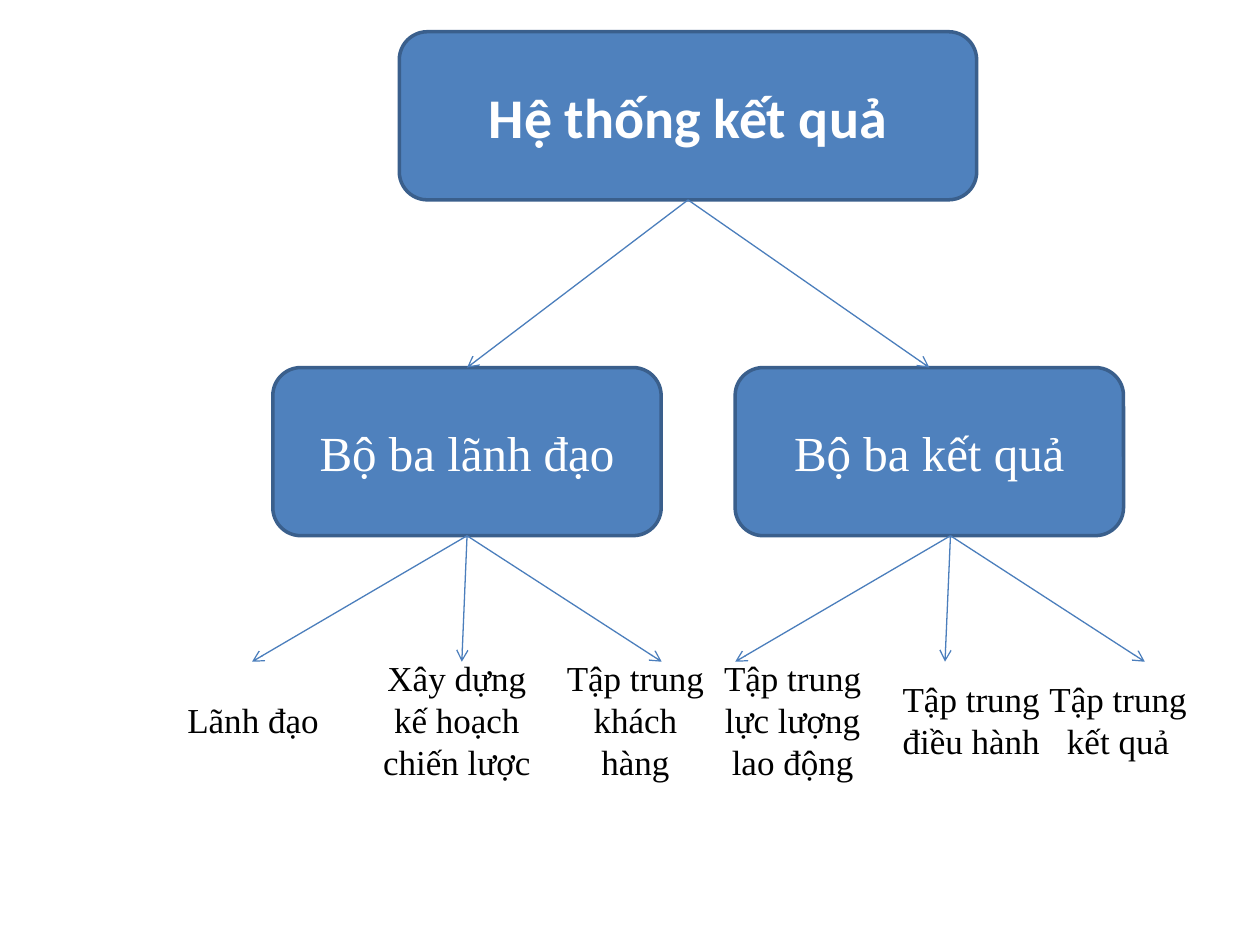
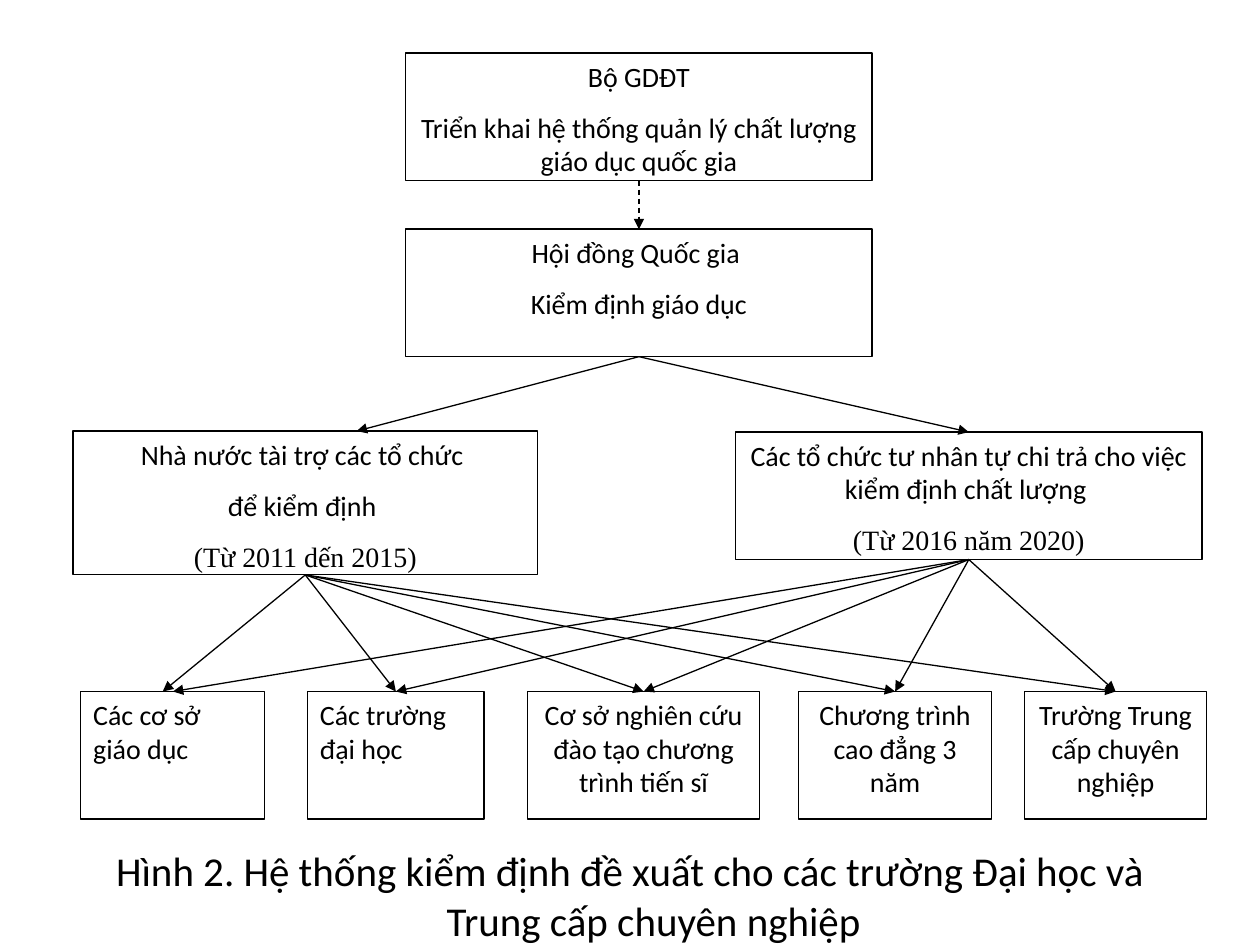
from lxml.etree import SubElement
from pptx import Presentation
from pptx.dml.color import RGBColor
from pptx.enum.dml import MSO_LINE
from pptx.enum.shapes import MSO_CONNECTOR, MSO_SHAPE
from pptx.enum.text import MSO_ANCHOR, PP_ALIGN
from pptx.oxml.ns import qn
from pptx.util import Cm, Pt

SANS, SERIF = "Calibri", "Times New Roman"
BLACK, WHITE = "000000", "FFFFFF"
BLUE, BLUE_EDGE, BLUE_LINE = "4F81BD", "3A5F8C", "4B7EBC"
TOP, BOTTOM = 0, 2


def rgb(value):
    return RGBColor.from_string(value)


class Deck:
    """Holds the presentation, the current slide and its arrow style."""

    def __init__(self):
        self.prs = Presentation()
        self.prs.slide_width, self.prs.slide_height = Cm(25.4), Cm(19.05)

    def new_slide(self, arrow_color, arrow_head):
        self.s = self.prs.slides.add_slide(self.prs.slide_layouts[6])
        self.arrow_color, self.arrow_head = arrow_color, arrow_head

    def set_text(self, sp, lines, size, font=SANS, color=BLACK, bold=False,
                 align=PP_ALIGN.CENTER, anchor=MSO_ANCHOR.MIDDLE, after=0):
        """Fill a shape; a line is a string or a (string, font) pair."""
        tf = sp.text_frame
        tf.word_wrap = True
        tf.vertical_anchor = anchor
        for i, line in enumerate(lines):
            text, face = (line, font) if isinstance(line, str) else line
            p = tf.paragraphs[0] if i == 0 else tf.add_paragraph()
            p.text = text
            p.alignment = align
            p.space_after = Pt(after)
            p.font.name, p.font.size, p.font.bold = face, Pt(size), bold
            p.font.color.rgb = rgb(color)
        return sp

    def box(self, shape, at, fill, edge, width):
        sp = self.s.shapes.add_shape(shape, *map(Cm, at))
        sp.shadow.inherit = False
        sp.fill.solid()
        sp.fill.fore_color.rgb = rgb(fill)
        sp.line.color.rgb = rgb(edge)
        sp.line.width = Pt(width)
        return sp

    def node(self, text, at, size, font, bold=False):
        sp = self.box(MSO_SHAPE.ROUNDED_RECTANGLE, at, BLUE, BLUE_EDGE, 2)
        return self.set_text(sp, [text], size, font, WHITE, bold)

    def frame(self, lines, at, align=PP_ALIGN.CENTER):
        sp = self.box(MSO_SHAPE.RECTANGLE, at, WHITE, BLACK, 0.75)
        return self.set_text(sp, lines, 16, align=align, anchor=MSO_ANCHOR.TOP, after=10)

    def label(self, text, at, size, font, anchor=MSO_ANCHOR.MIDDLE):
        sp = self.s.shapes.add_textbox(*map(Cm, at))
        return self.set_text(sp, [text], size, font, anchor=anchor)

    def arrow(self, start, end, dashed=False):
        """Each end is a shape (bottom to top middle) or a point in cm."""
        points = [e if isinstance(e, tuple) else (0, 0) for e in (start, end)]
        c = self.s.shapes.add_connector(
            MSO_CONNECTOR.STRAIGHT, *(Cm(v) for point in points for v in point))
        if not isinstance(start, tuple):
            c.begin_connect(start, BOTTOM)
        if not isinstance(end, tuple):
            c.end_connect(end, TOP)
        c.line.color.rgb = rgb(self.arrow_color)
        c.line.width = Pt(0.75)
        if dashed:
            c.line.dash_style = MSO_LINE.DASH
        ln = c._element.spPr.find(qn("a:ln"))
        SubElement(ln, qn("a:tailEnd"), type=self.arrow_head)
        SubElement(c._element.spPr, qn("a:effectLst"))


def results_slide(d):
    d.new_slide(BLUE_LINE, "arrow")

    # Two levels of boxes
    root = d.node("Hệ thống kết quả", (8.05, 0.64, 11.64, 3.39), 32, SANS, True)
    leaders = d.node("Bộ ba lãnh đạo", (5.5, 7.41, 7.83, 3.39), 28, SERIF)
    results = d.node("Bộ ba kết quả", (14.82, 7.41, 7.83, 3.39), 28, SERIF)
    for branch in (leaders, results):
        d.arrow(root, branch)

    # Fans of arrows down to the labels
    leaf_top = 13.34
    for start, x in ((leaders, 9.42), ((19.16, 10.8), 19.16)):
        for dx in (-4.34, 3.92, -0.11):
            d.arrow(start, (x + dx, leaf_top))

    leaves = [("Lãnh đạo ", 3.18, 4.02),
              ("Xây dựng kế hoạch chiến lược", 7.41, 3.6),
              ("Tập trung khách hàng", 11.01, 3.6),
              ("Tập trung lực lượng lao động", 14.18, 3.6),
              ("Tập trung điều hành", 17.57, 4.02),
              ("Tập trung kết quả", 20.74, 3.6)]
    for text, left, width in leaves:
        d.label(text, (left, leaf_top, width, 2.33), 20, SERIF)


def accreditation_slide(d):
    d.new_slide(BLACK, "triangle")
    height = 2.57

    # Caption with a hanging indent
    caption = d.label("Hình 2. Hệ thống kiểm định đề xuất cho các trường Đại học và "
                      "Trung cấp chuyên nghiệp", (1.27, 16.93, 22.86, 2.12),
                      23.4, SANS, MSO_ANCHOR.TOP)
    p = caption.text_frame.paragraphs[0]
    p.space_before = Pt(4.7)
    pPr = p._p.get_or_add_pPr()
    pPr.set("marL", str(Cm(0.95)))
    pPr.set("indent", str(-Cm(0.95)))

    # Authorities and accreditors
    ministry = d.frame(
        ["Bộ GDĐT", "Triển khai hệ thống quản lý chất lượng giáo dục quốc gia"],
        (8.18, 1.07, 9.4, height))
    council = d.frame(["Hội đồng Quốc gia ", "Kiểm định giáo dục"],
                      (8.18, 4.62, 9.4, height))
    state = d.frame(["Nhà nước tài trợ các tổ chức ", "để kiểm định ",
                     ("(Từ 2011 dến 2015)", SERIF)], (1.47, 8.69, 9.37, 2.9))
    private = d.frame(
        ["Các tổ chức tư nhân tự chi trả cho việc kiểm định chất lượng ",
         ("(Từ 2016 năm 2020)", SERIF)], (14.83, 8.71, 9.4, height))
    d.arrow(ministry, council, dashed=True)
    d.arrow(council, private)
    d.arrow(council, (7.19, 8.69))

    # Institutions
    row_top = 13.94
    left, center = PP_ALIGN.LEFT, PP_ALIGN.CENTER
    institutions = [
        d.frame([text], (x, row_top, width, height), align)
        for text, x, width, align in (
            ("Các cơ sở giáo dục", 1.63, 3.71, left),
            ("Các trường đại học", 6.2, 3.56, left),
            ("Cơ sở nghiên cứu đào tạo chương trình tiến sĩ", 10.64, 4.67, center),
            ("Chương trình cao đẳng 3 năm", 16.1, 3.89, center),
            ("Trường Trung cấp chuyên nghiệp", 20.65, 3.68, center))]
    for target in [(3.28, row_top)] + institutions[1:]:
        d.arrow(state, target)
    for target in institutions:
        d.arrow(private, target)


def main():
    d = Deck()
    results_slide(d)
    accreditation_slide(d)
    d.prs.save("out.pptx")


if __name__ == "__main__":
    main()
